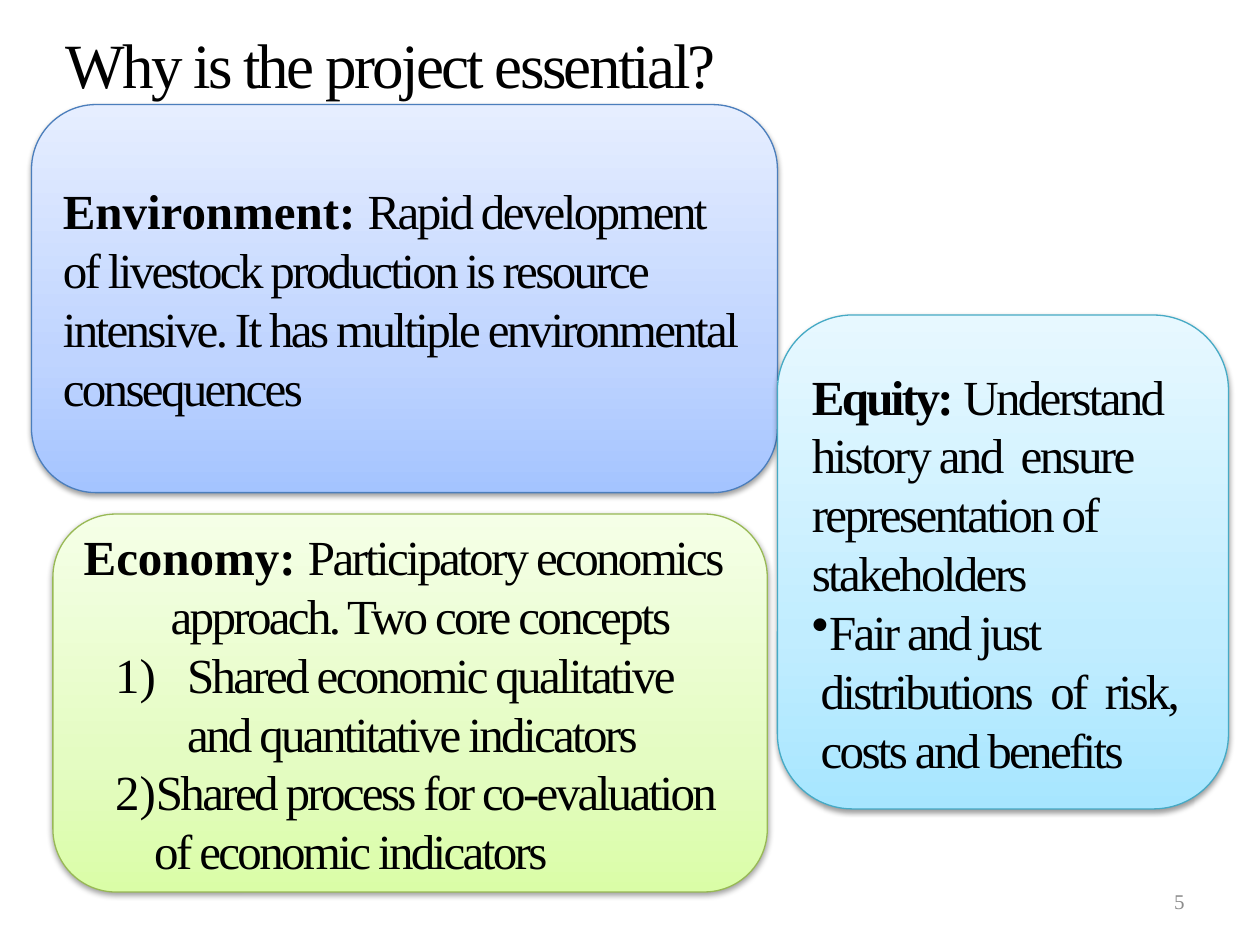
from copy import deepcopy
from lxml import etree
from pptx import Presentation
from pptx.dml.color import RGBColor
from pptx.enum.shapes import MSO_SHAPE
from pptx.enum.text import MSO_ANCHOR, MSO_AUTO_SIZE, PP_ALIGN
from pptx.oxml import parse_xml
from pptx.oxml.ns import qn
from pptx.util import Inches, Pt

ROUNDED = MSO_SHAPE.ROUNDED_RECTANGLE
MIDDLE = MSO_ANCHOR.MIDDLE
LEFT, RIGHT = PP_ALIGN.LEFT, PP_ALIGN.RIGHT
NO_FIT = MSO_AUTO_SIZE.NONE
FONT = "Times New Roman"
SHADOW = (
    '<a:outerShdw xmlns:a="http://schemas.openxmlformats.org/drawingml/2006/main" '
    'blurRad="40000" dist="20000" dir="5400000" rotWithShape="0">'
    '<a:srgbClr val="000000"><a:alpha val="38000"/></a:srgbClr></a:outerShdw>'
)


def rgb(value):
    return RGBColor.from_string(value)


def write(p, runs, size, color="000000", align=LEFT):
    p.alignment = align
    p.font.name = FONT
    p.font.size = Pt(size)
    p.font.color.rgb = rgb(color)
    for text, bold, spacing in runs:
        r = p.add_run()
        r.text = text
        r.font.bold = bold
        if spacing:
            r._r.get_or_add_rPr().set("spc", str(int(spacing * 100)))


prs = Presentation()
prs.slide_width, prs.slide_height = Inches(10), Inches(7.5)
s = prs.slides.add_slide(prs.slide_layouts[5])

title = s.shapes.title
title.left, title.top = Inches(0.42), Inches(0.17)
title.width, title.height = Inches(9.58), Inches(0.67)
tf = title.text_frame
tf.auto_size = NO_FIT
tf.vertical_anchor = MIDDLE
write(tf.paragraphs[0], [("Why is the project essential?", False, -1.5)], 36)

number = s.shapes.add_textbox(Inches(7.17), Inches(6.95), Inches(2.33), Inches(0.4))
tf = number.text_frame
tf.word_wrap = True
tf.vertical_anchor = MIDDLE
write(tf.paragraphs[0], [("5", False, 0)], 12, "8C8C8C", RIGHT)

# box, gradient, line, top margin, paragraphs of (runs, left margin, indent, bullet)
cards = [
    ((0.25, 0.83, 5.92, 3.08), ("A4C4FF", "BFD4FF", "E6EEFF"), "4B7EBC", 0.05, [
        ([("Environment: ", True, 0),
          ("Rapid development of livestock production is resource intensive. "
           "It has multiple environmental consequences", False, -1.5)], 0, 0, None),
    ]),
    ((0.42, 4.08, 5.67, 3), ("DAFDA7", "E4FCC2", "F5FFE7"), "98B955", 0.05, [
        ([("Economy: ", True, 0),
          ("Participatory economics approach. Two core concepts", False, -1.5)],
         0.69, -0.69, None),
        ([("Shared economic qualitative and quantitative indicators", False, -1.5)],
         0.82, -0.57, ("buAutoNum", "type", "arabicParenR")),
        ([("Shared process for co-evaluation of economic indicators", False, -1.5)],
         0.56, -0.31, ("buAutoNum", "type", "arabicParenR")),
    ]),
    ((6.17, 2.5, 3.58, 3.92), ("A7E6FF", "C1EDFF", "E7F8FF"), "46AAC5", 0.21, [
        ([("Equity: ", True, -1.5),
          ("Understand history and  ensure representation of stakeholders", False, -1.5)],
         0, 0, None),
        ([("Fair and just distributions  of  risk, costs and benefits", False, -1.5)],
         0.07, -0.07, ("buChar", "char", "•")),
    ]),
]

for box, colors, line, top, paragraphs in cards:
    sp = s.shapes.add_shape(ROUNDED, *[Inches(v) for v in box])
    sp.fill.gradient()
    sp.fill.gradient_angle = 90
    first = sp.fill._fill._gradFill.gsLst[0]
    first.addnext(deepcopy(first))
    for stop, color, position in zip(sp.fill.gradient_stops, colors, (0, 0.35, 1)):
        stop.color.rgb = rgb(color)
        stop.position = position
    sp.line.color.rgb = rgb(line)
    sp.line.width = Pt(0.75)
    sp.shadow.inherit = False
    sp._element.spPr.find(qn("a:effectLst")).append(parse_xml(SHADOW))

    tf = sp.text_frame
    tf.word_wrap = True
    tf.vertical_anchor = MIDDLE
    tf.margin_top = Inches(top)
    for i, (runs, margin, indent, bullet) in enumerate(paragraphs):
        p = tf.add_paragraph() if i else tf.paragraphs[0]
        write(p, runs, 28)
        pPr = p._p.get_or_add_pPr()
        pPr.set("marL", str(Inches(margin)))
        pPr.set("indent", str(Inches(indent)))
        if bullet:
            tag, key, value = bullet
            bu = etree.Element(qn("a:" + tag))
            bu.set(key, value)
            pPr.find(qn("a:defRPr")).addprevious(bu)

prs.save("out.pptx")
